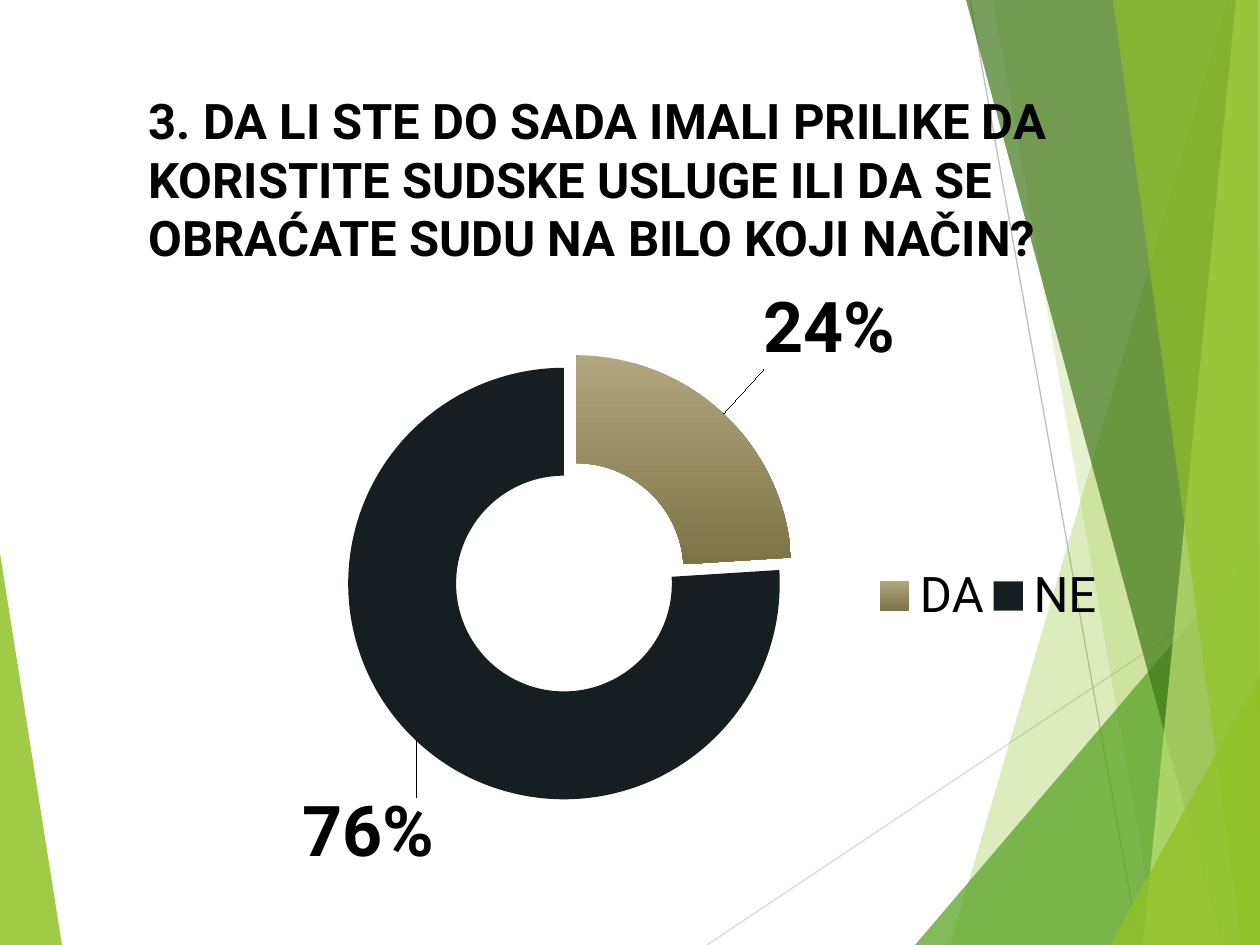
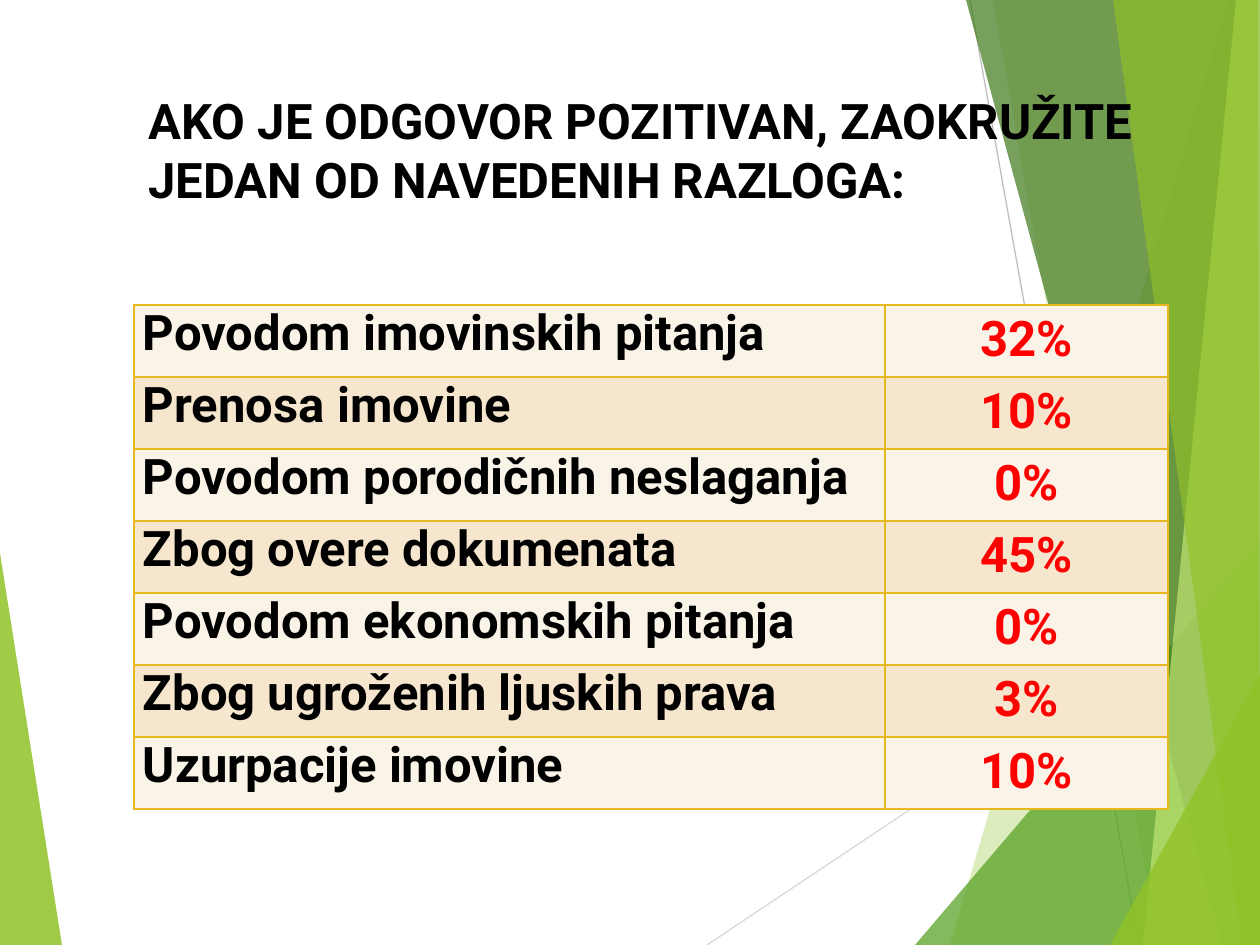
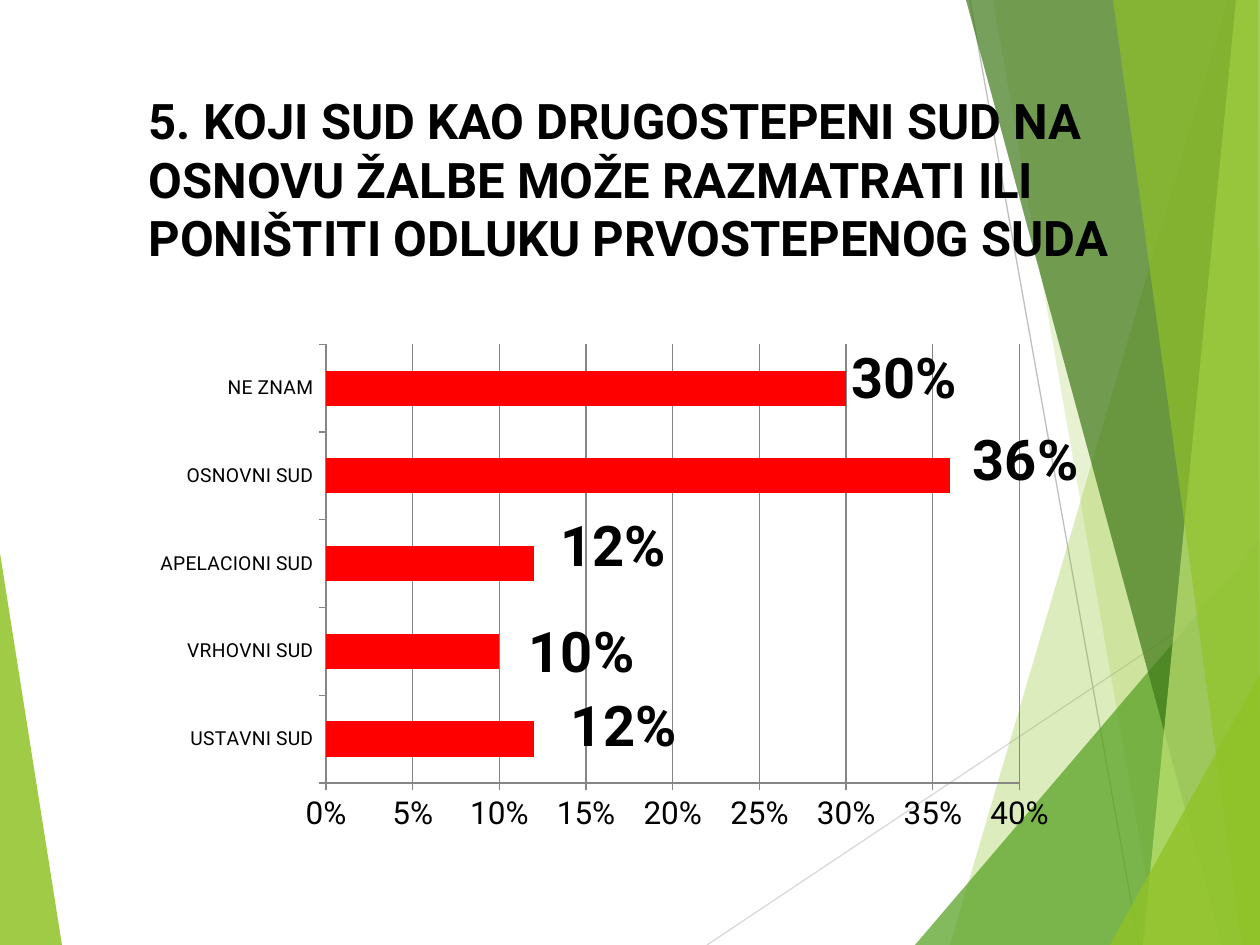
import dataclasses

import pptx
import pptx.chart.data
import pptx.dml.color
import pptx.enum.chart
import pptx.enum.shapes
import pptx.enum.text
import pptx.oxml
import pptx.oxml.ns
import pptx.util

PX = 914400 / 126


@dataclasses.dataclass(frozen=True)
class Theme:
    font: str = "Roboto"
    text: str = "000000"
    accent: str = "FF0000"
    axis: str = "868686"
    ring_light: str = "B0A77E"
    ring_shade: str = "7C7349"
    ring_dark: str = "161E22"
    border: str = "E6B91E"
    rows: tuple = ("FAF3E8", "F5E6CD")
    heading_size: int = 28
    chart_size: int = 18
    category_size: int = 11
    ring_label_size: int = 40
    bar_label_size: int = 32


THEME = Theme()

RULES = [((707, 945), (1260, 576), "D9D9D9"), ((970, 0), (1139, 945), "BFBFBF")]
# Outline, colour, opacity in percent
BANDS = [
    ([(0, 553), (62, 945), (0, 945)], "90C226", 85),
    ([(1228, 0), (950, 945), (1260, 945), (1260, 0)], "90C226", 30),
    ([(993, 0), (1158, 945), (1260, 945), (1260, 0)], "90C226", 20),
    ([(915, 945), (1260, 541), (1260, 945)], "54A021", 72),
    ([(966, 0), (1222, 945), (1260, 945), (1260, 0)], "3F7819", 70),
    ([(1236, 0), (1143, 945), (1260, 945), (1260, 0)], "C0E474", 70),
    ([(1113, 0), (1242, 945), (1260, 945), (1258, 0)], "90C226", 65),
    ([(1110, 945), (1260, 674), (1260, 945)], "90C226", 80),
]

USE_TITLE = ("3. DA LI STE DO SADA IMALI PRILIKE DA KORISTITE SUDSKE USLUGE "
             "ILI DA SE OBRAĆATE SUDU NA BILO KOJI NAČIN?")
USE_BOX = (199, 220, 945, 654)
# Category, value, label shift in px
USE_ANSWERS = [("DA", 0.24, (143, -124)), ("NE", 0.76, (-85, 137))]

REASON_TITLE = "AKO JE ODGOVOR POZITIVAN, ZAOKRUŽITE JEDAN OD NAVEDENIH RAZLOGA:"
REASONS = [
    ("Povodom imovinskih pitanja", "32%"),
    ("Prenosa imovine", "10%"),
    ("Povodom porodičnih neslaganja", "0%"),
    ("Zbog overe dokumenata", "45%"),
    ("Povodom ekonomskih pitanja", "0%"),
    ("Zbog ugroženih ljuskih prava", "3%"),
    ("Uzurpacije imovine", "10%"),
]
REASON_COLUMNS = (751, 283)
REASON_ROW = 72

COURT_TITLE = ("5. KOJI SUD KAO DRUGOSTEPENI SUD NA OSNOVU ŽALBE MOŽE RAZMATRATI "
               "ILI PONIŠTITI ODLUKU PRVOSTEPENOG SUDA")
COURT_BOX = (157, 275, 966, 597)
COURTS = [
    ("USTAVNI SUD", 0.12, (32, -12)),
    ("VRHOVNI SUD", 0.10, (24, 1)),
    ("APELACIONI SUD", 0.12, (21, -17)),
    ("OSNOVNI SUD", 0.36, (17, -15)),
    ("NE ZNAM", 0.30, (0, -9)),
]


def emu(*lengths):
    return [pptx.util.Emu(round(length * PX)) for length in lengths]


def rgb(color):
    return pptx.dml.color.RGBColor.from_string(color)


def xml(tag, body="", attributes=""):
    spaces = pptx.oxml.ns.nsdecls("a", "c")
    return pptx.oxml.parse_xml(f"<{tag} {spaces} {attributes}>{body}</{tag}>")


def paint(fill, color):
    fill.solid()
    fill.fore_color.rgb = rgb(color)


def style_font(font, size, color=THEME.text, bold=False):
    font.name = THEME.font
    font.size = pptx.util.Pt(size)
    font.bold = bold
    font.color.rgb = rgb(color)


def write(frame, text, align="LEFT", **font_format):
    para = frame.paragraphs[0]
    para.alignment = getattr(pptx.enum.text.PP_ALIGN, align)
    span = para.add_run()
    span.text = text
    style_font(span.font, **font_format)


def draw_rule(page, start, end, color):
    rule = page.shapes.add_connector(
        pptx.enum.shapes.MSO_CONNECTOR.STRAIGHT, *emu(*start, *end))
    rule.line.color.rgb = rgb(color)
    rule.line.width = pptx.util.Pt(0.75)
    rule.element.spPr.append(xml("a:effectLst"))
    return rule


def draw_band(page, outline, color, opacity):
    builder = page.shapes.build_freeform(*outline[0], scale=PX)
    builder.add_line_segments(outline[1:], close=True)
    band = builder.convert_to_shape()
    paint(band.fill, color)
    band.fill._xPr.find(".//" + pptx.oxml.ns.qn("a:srgbClr")).append(
        xml("a:alpha", attributes=f'val="{opacity * 1000}"'))
    band.line.fill.background()
    band.shadow.inherit = False
    return band


def decorate(layout, page):
    """Draw the backdrop on the page, then move it behind the layout's parts."""
    parts = [draw_rule(page, *rule) for rule in RULES]
    parts += [draw_band(page, *band) for band in BANDS]
    for index, part in enumerate(parts):
        part.element.xpath(".//p:cNvPr")[0].set("id", str(100 + index))
        layout.shapes.element.insert(2 + index, part.element)


def set_title(page, text, height):
    title = page.shapes.title
    title.left, title.top, title.width, title.height = emu(136, 84, 1071, height)
    frame = title.text_frame
    frame.word_wrap = True
    frame.auto_size = pptx.enum.text.MSO_AUTO_SIZE.NONE
    frame.vertical_anchor = pptx.enum.text.MSO_ANCHOR.TOP
    write(frame, text, size=THEME.heading_size, bold=True)


def manual_layout(x, y, width=None, height=None, inner=False):
    body = '<c:layoutTarget val="inner"/>' if inner else ""
    if width:
        body += '<c:xMode val="edge"/><c:yMode val="edge"/>'
    sizes = {"x": x, "y": y, "w": width, "h": height}
    body += "".join(f'<c:{name} val="{value:.3f}"/>'
                    for name, value in sizes.items() if value is not None)
    return xml("c:layout", f"<c:manualLayout>{body}</c:manualLayout>")


def add_chart(page, kind, box, answers, plot_layout, label_size, position=None):
    data = pptx.chart.data.CategoryChartData(number_format="0%")
    data.categories = [name for name, _, _ in answers]
    data.add_series("Series 1", [value for _, value, _ in answers])
    chart = page.shapes.add_chart(
        getattr(pptx.enum.chart.XL_CHART_TYPE, kind), *emu(*box), data).chart
    chart.has_title = False
    chart.has_legend = False
    style_font(chart.font, THEME.chart_size)
    plot = chart.plots[0]
    plot.vary_by_categories = kind == "DOUGHNUT"

    area = chart.element.xpath(".//c:plotArea")[0]
    for old in area.xpath("./c:layout"):
        area.remove(old)
    area.insert(0, manual_layout(*plot_layout, inner=True))

    series = plot.series[0]
    labels = series.data_labels
    labels.show_value = True
    labels.number_format = "0%"
    labels.number_format_is_linked = False
    style_font(labels.font, label_size, bold=True)
    for index in range(len(answers)):
        label = series.points[index].data_label
        style_font(label.font, label_size, bold=True)
        if position is not None:
            label.position = position
    for label, (_, _, (right, down)) in zip(chart.element.xpath(".//c:dLbl"), answers):
        label.insert(1, manual_layout(right / box[2], down / box[3]))
    for leader in chart.element.xpath(".//c:showLeaderLines"):
        leader.set("val", str(int(kind == "DOUGHNUT")))
    return chart


def build_use_page(page):
    set_title(page, USE_TITLE, 190)
    chart = add_chart(page, "DOUGHNUT", USE_BOX, USE_ANSWERS,
                      (0.155, 0.19, 0.475, 0.713), THEME.ring_label_size)
    yes, no = [chart.plots[0].series[0].points[index].format.fill for index in (0, 1)]
    yes.gradient()
    yes.gradient_angle = 270
    for stop, color in zip(yes.gradient_stops, (THEME.ring_light, THEME.ring_shade)):
        stop.color.rgb = rgb(color)
    paint(no, THEME.ring_dark)
    chart.element.xpath(".//c:ser/c:tx")[0].addnext(
        xml("c:explosion", attributes='val="8"'))

    chart.has_legend = True
    chart.legend.position = pptx.enum.chart.XL_LEGEND_POSITION.RIGHT
    chart.legend.include_in_layout = False
    style_font(chart.legend.font, THEME.heading_size)
    legend = chart.element.xpath(".//c:legend")[0]
    for old in legend.xpath("./c:layout"):
        legend.remove(old)
    legend.xpath("./c:legendPos")[0].addnext(manual_layout(0.71, 0.53, 0.25, 0.09))


def frame_cell(cell):
    line = f'<a:solidFill><a:srgbClr val="{THEME.border}"/></a:solidFill>'
    properties = cell._tc.get_or_add_tcPr()
    for index, side in enumerate("LRTB"):
        properties.insert(index, xml(f"a:ln{side}", line, 'w="12700"'))


def build_reason_page(page):
    set_title(page, REASON_TITLE, 131)
    table = page.shapes.add_table(
        len(REASONS), 2,
        *emu(134, 305, sum(REASON_COLUMNS), REASON_ROW * len(REASONS))).table
    table.first_row = table.horz_banding = False
    for column, width in zip(table.columns, emu(*REASON_COLUMNS)):
        column.width = width
    formats = [{"color": THEME.text}, {"color": THEME.accent, "align": "CENTER"}]
    for row, texts in enumerate(REASONS):
        table.rows[row].height = emu(REASON_ROW)[0]
        for column, text in enumerate(texts):
            cell = table.cell(row, column)
            paint(cell.fill, THEME.rows[row % 2])
            frame_cell(cell)
            if column == 0:
                cell.margin_left = cell.margin_right = emu(9)[0]
                cell.margin_top = cell.margin_bottom = 0
            write(cell.text_frame, text, size=THEME.heading_size, bold=True,
                  **formats[column])


def build_court_page(page):
    set_title(page, COURT_TITLE, 190)
    chart = add_chart(page, "BAR_CLUSTERED", COURT_BOX, COURTS,
                      (0.175, 0.116, 0.718, 0.735), THEME.bar_label_size,
                      pptx.enum.chart.XL_LABEL_POSITION.OUTSIDE_END)
    chart.plots[0].gap_width = 150
    paint(chart.plots[0].series[0].format.fill, THEME.accent)

    values, categories = chart.value_axis, chart.category_axis
    values.minimum_scale, values.maximum_scale, values.major_unit = 0, 0.4, 0.05
    values.has_major_gridlines = True
    values.tick_labels.number_format = "0%"
    values.tick_labels.number_format_is_linked = False
    values.major_gridlines.format.line.color.rgb = rgb(THEME.axis)
    for axis, size in ((values, THEME.chart_size), (categories, THEME.category_size)):
        axis.major_tick_mark = pptx.enum.chart.XL_TICK_MARK.OUTSIDE
        axis.format.line.color.rgb = rgb(THEME.axis)
        style_font(axis.tick_labels.font, size)


def main():
    deck = pptx.Presentation()
    deck.slide_width, deck.slide_height = emu(1260, 945)
    layout = deck.slide_layouts.get_by_name("Title Only")
    builders = (build_use_page, build_reason_page, build_court_page)
    pages = [deck.slides.add_slide(layout) for _ in builders]
    decorate(layout, pages[0])
    for build, page in zip(builders, pages):
        build(page)
    deck.save("out.pptx")


if __name__ == "__main__":
    main()
